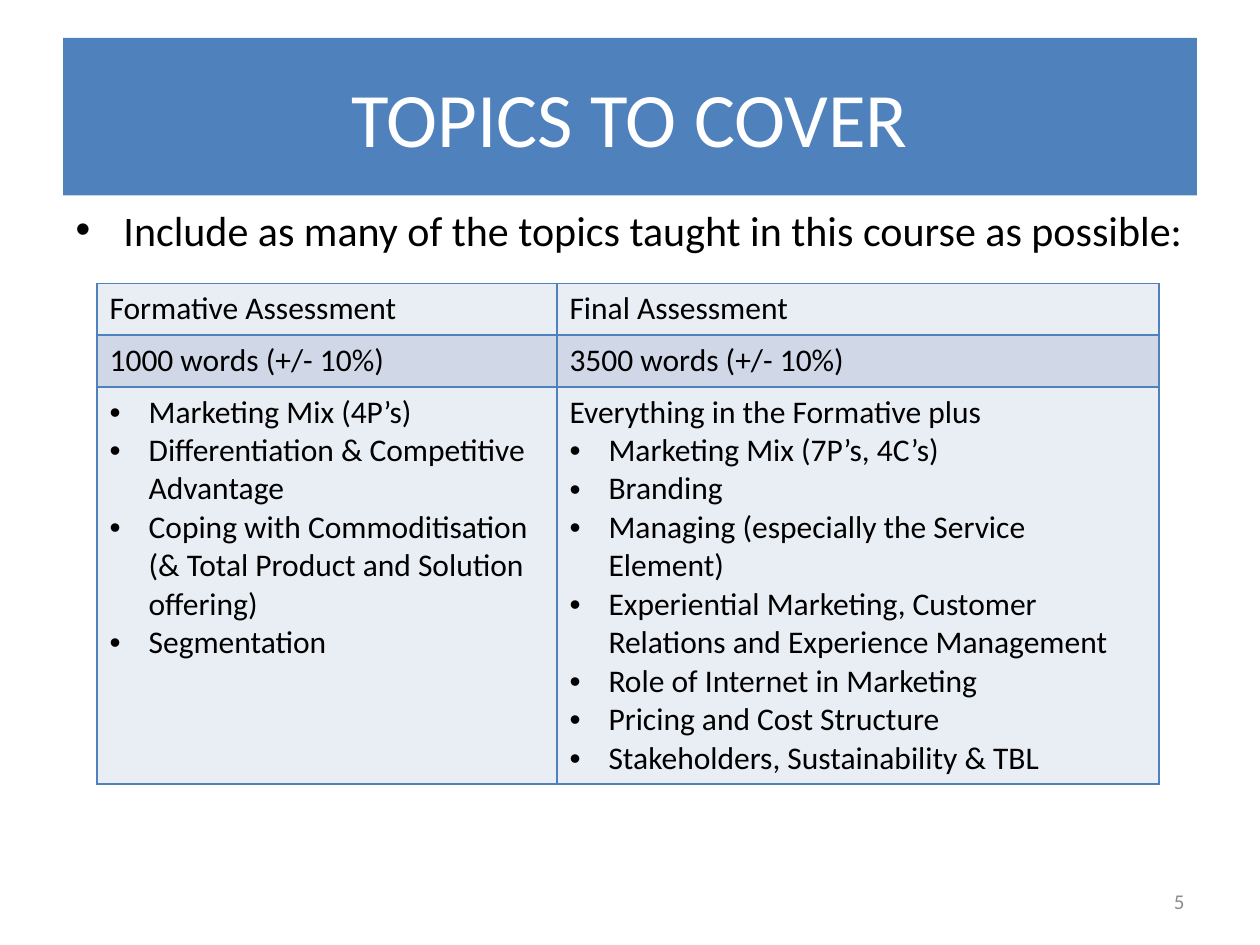
from lxml.etree import SubElement
from pptx import Presentation
from pptx.dml.color import RGBColor
from pptx.enum.text import MSO_ANCHOR as Anchor, MSO_AUTO_SIZE as Auto, PP_ALIGN as Align
from pptx.oxml import parse_xml
from pptx.oxml.ns import nsdecls, qn
from pptx.util import Inches, Pt

BLUE, PALE, MID = "4F81BD", "E9EDF4", "D0D8E8"
BLACK, WHITE, GREY = "000000", "FFFFFF", "8C8C8C"

FORMATIVE = [
    "• Marketing Mix (4P’s)",
    "• Differentiation & Competitive Advantage",
    "• Coping with Commoditisation (& Total Product and Solution offering)",
    "• Segmentation",
]
FINAL = [
    "Everything in the Formative plus",
    "• Marketing Mix (7P’s, 4C’s)",
    "• Branding",
    "• Managing (especially the Service Element)",
    "• Experiential Marketing, Customer Relations and Experience Management",
    "• Role of Internet in Marketing",
    "• Pricing and Cost Structure",
    "• Stakeholders, Sustainability & TBL",
]
ROWS = [
    (["Formative Assessment"], ["Final Assessment"]),
    (["1000 words (+/- 10%)"], ["3500 words (+/- 10%)"]),
    (FORMATIVE, FINAL),
]


def color(code):
    return RGBColor.from_string(code)


def place(shape, box):
    shape.left, shape.top, shape.width, shape.height = map(Inches, box)


class Deck:
    font = "Calibri"

    def __init__(self):
        self.prs = Presentation()
        self.prs.slide_width, self.prs.slide_height = Inches(10), Inches(7.5)
        self.slide = self.prs.slides.add_slide(self.prs.slide_layouts[1])

    def style(self, para, size, code, align=Align.LEFT):
        para.alignment = align
        font = para.font
        font.name, font.size = self.font, Pt(size)
        font.color.rgb = color(code)

    def bullet(self, para, indent):
        props = para._p.get_or_add_pPr()
        props.set("marL", str(Inches(indent)))
        props.set("indent", str(-Inches(indent)))
        SubElement(props, qn("a:buFont")).set("typeface", "Arial")
        SubElement(props, qn("a:buChar")).set("char", "•")

    def title(self, text, box):
        shape = self.slide.shapes.title
        place(shape, box)
        shape.fill.solid()
        shape.fill.fore_color.rgb = color(BLUE)
        frame = shape.text_frame
        frame.text, frame.auto_size = text, Auto.NONE
        frame.vertical_anchor = Anchor.MIDDLE
        self.style(frame.paragraphs[0], 44, WHITE, Align.CENTER)

    def body(self, text, box):
        shape = self.slide.placeholders[1]
        place(shape, box)
        frame = shape.text_frame
        frame.text, frame.auto_size = text, Auto.NONE
        para = frame.paragraphs[0]
        self.bullet(para, 0.38)
        self.style(para, 24, BLACK)

    def border(self, cell):
        props = cell._tc.get_or_add_tcPr()
        for spot, side in enumerate(("lnL", "lnR", "lnT", "lnB")):
            props.insert(spot, parse_xml(
                f'<a:{side} {nsdecls("a")} w="{Pt(1)}"><a:solidFill>'
                f'<a:srgbClr val="{BLUE}"/></a:solidFill></a:{side}>'))

    def cell(self, cell, lines, fill):
        cell.fill.solid()
        cell.fill.fore_color.rgb = color(fill)
        self.border(cell)
        frame = cell.text_frame
        frame.text = "\n".join(line.removeprefix("• ") for line in lines)
        for para, line in zip(frame.paragraphs, lines):
            if line.startswith("•"):
                self.bullet(para, 0.31)
            self.style(para, 18, BLACK)

    def table(self, rows, box, widths, heights):
        shape = self.slide.shapes.add_table(
            len(rows), len(widths), *map(Inches, box))
        table = shape.table
        table.first_row = table.horz_banding = False
        for col, width in zip(table.columns, widths):
            col.width = Inches(width)
        for row, height in zip(table.rows, heights):
            row.height = Inches(height)
        for r, row in enumerate(rows):
            for c, lines in enumerate(row):
                self.cell(table.cell(r, c), lines, MID if r % 2 else PALE)

    def number(self, text, box):
        frame = self.slide.shapes.add_textbox(*map(Inches, box)).text_frame
        frame.text, frame.word_wrap = text, True
        frame.vertical_anchor = Anchor.MIDDLE
        self.style(frame.paragraphs[0], 12, GREY, Align.RIGHT)


def main():
    deck = Deck()
    # Heading and lead line
    deck.title("TOPICS TO COVER", (0.5, 0.3, 9, 1.25))
    deck.body("Include as many of the topics taught in this course as possible:",
              (0.5, 1.57, 9, 5.35))
    # Topics per assessment
    deck.table(ROWS, (0.77, 2.25, 8.43, 3.91), (3.65, 4.78), (0.41, 0.41, 3.09))
    # Slide number
    deck.number("5", (7.53, 6.95, 1.97, 0.4))
    deck.prs.save("out.pptx")


if __name__ == "__main__":
    main()
